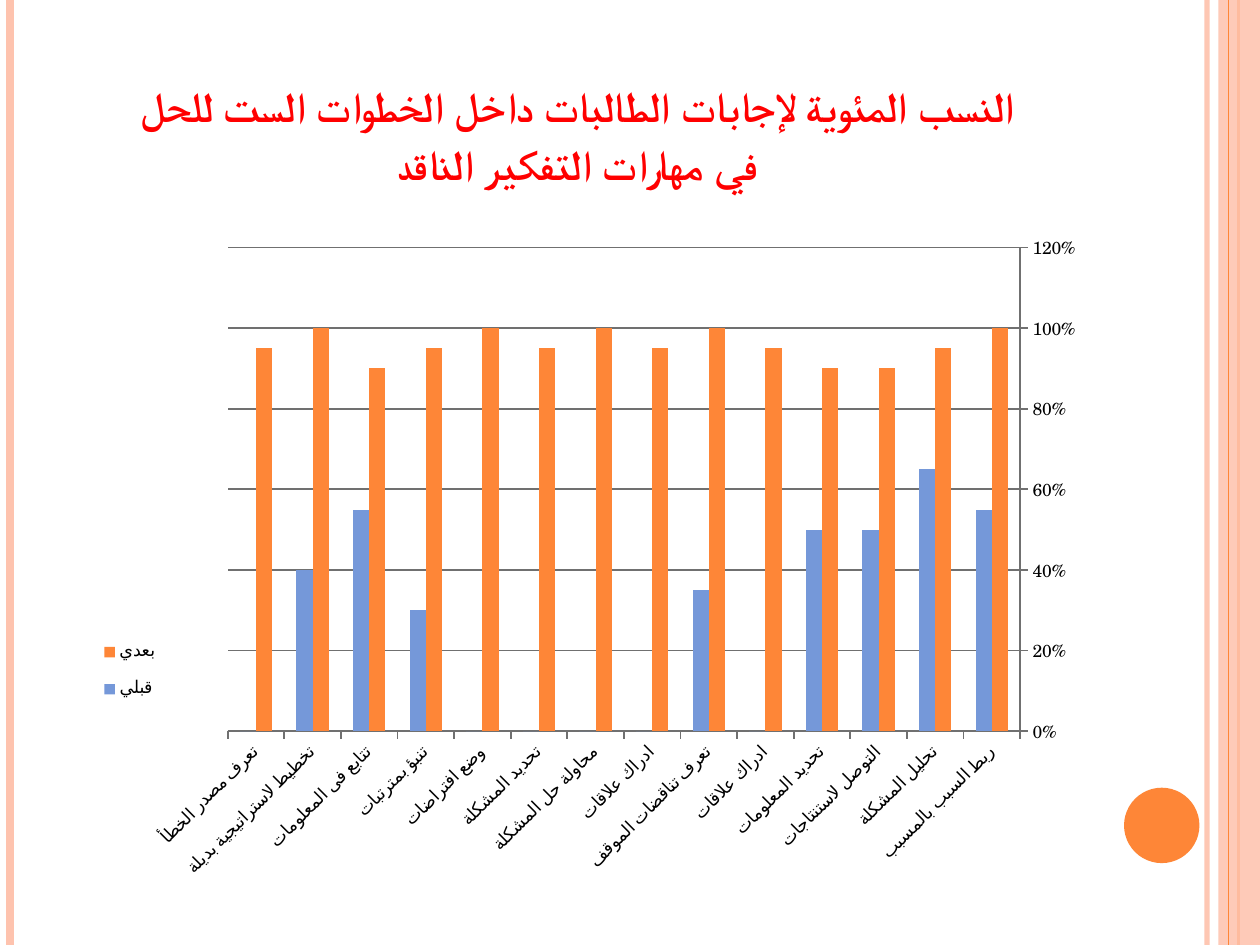
from lxml import etree
from pptx import Presentation
from pptx.chart.data import CategoryChartData as ChartData
from pptx.dml.color import RGBColor as RGB
from pptx.enum.chart import XL_CHART_TYPE as Kind, XL_LEGEND_POSITION as Side
from pptx.enum.chart import XL_TICK_MARK as Tick
from pptx.enum.shapes import MSO_CONNECTOR as Link, MSO_SHAPE as Form
from pptx.enum.text import MSO_ANCHOR as Anchor, PP_ALIGN as Align
from pptx.oxml.ns import qn
from pptx.util import Cm, Pt

COLORS = {"pink": "FEC3AE", "orange": "FE8637", "blue": "7598D9",
          "red": "FF0000", "grey": "707070", "black": "000000"}
WIDE, HIGH = 25.4, 19.05
STEPS = ["ربط السبب بالمسبب", "تحليل المشكلة", "التوصل لاستنتاجات",
         "تحديد المعلومات", "ادراك علاقات", "تعرف تناقضات الموقف",
         "ادراك علاقات", "محاولة حل المشكلة", "تحديد المشكلة",
         "وضع افتراضات", "تنبؤ بمترتبات", "تتابع فى المعلومات",
         "تخطيط لاستراتيجية بديلة", "تعرف مصدر الخطأ"]
SERIES = [
    ("بعدي", "orange", [1, 0.95, 0.9, 0.9, 0.95, 1, 0.95,
                        1, 0.95, 1, 0.95, 0.9, 1, 0.95]),
    ("قبلي", "blue", [0.55, 0.65, 0.5, 0.5, 0, 0.35, 0,
                      0, 0, 0, 0.3, 0.55, 0.4, 0]),
]


def color(name):
    return RGB.from_string(COLORS[name])


def fade(fill, part):
    """Set the opacity of a solid fill, in percent."""
    tone = fill._xPr.find(qn("a:solidFill"))[0]
    etree.SubElement(tone, qn("a:alpha"), val=str(part * 1000))


def add_rule(slide, x, high, tint, width, part=100):
    rule = slide.shapes.add_connector(Link.STRAIGHT, Cm(x), 0, Cm(x), Cm(high))
    rule.line.color.rgb = color(tint)
    rule.line.width = Pt(width)
    if part < 100:
        fade(rule.line.fill, part)
    etree.SubElement(rule._element.spPr, qn("a:effectLst"))


def add_form(slide, form, box, tint, part=100):
    shape = slide.shapes.add_shape(form, *map(Cm, box))
    shape.shadow.inherit = False
    shape.fill.solid()
    shape.fill.fore_color.rgb = color(tint)
    if part < 100:
        fade(shape.fill, part)
    shape.line.fill.background()


def add_frame(slide, wide, high):
    """Draw the side stripes and the corner disc."""
    add_rule(slide, wide - 1.07, high, "pink", 3, 93)
    add_rule(slide, 0.2, high, "pink", 4.5)
    add_rule(slide, wide - 0.43, high, "orange", 1.5)
    add_form(slide, Form.RECTANGLE, (wide - 0.84, 0, 0.84, high), "pink", 87)
    add_rule(slide, wide - 0.64, high, "orange", 0.75)
    add_form(slide, Form.OVAL, (wide - 2.74, high - 3.17, 1.52, 1.52), "orange")


def set_title(title, box):
    title.left, title.top, title.width, title.height = map(Cm, box)
    frame = title.text_frame
    frame.word_wrap = True
    frame.vertical_anchor = Anchor.BOTTOM
    frame.text = ("النسب المئوية لإجابات الطالبات داخل الخطوات الست للحل"
                  "\vفي مهارات التفكير الناقد")
    para = frame.paragraphs[0]
    para.alignment = Align.CENTER
    para.line_spacing = 1.15
    para._p.get_or_add_pPr().set("rtl", "1")
    for run in para.runs:
        font = run.font
        font.name, font.size, font.bold = "Times New Roman", Pt(24), True
        font.color.rgb = color("red")
        props = run._r.get_or_add_rPr()
        props.set("cap", "small")
        etree.SubElement(props, qn("a:cs"), typeface="Times New Roman")


def make_layout(box, inner=False):
    """Build a manual chart layout from fractions of the chart area."""
    layout = etree.Element(qn("c:layout"))
    manual = etree.SubElement(layout, qn("c:manualLayout"))
    marks = [("layoutTarget", "inner")] if inner else []
    marks += [("xMode", "edge"), ("yMode", "edge"), *zip("xywh", box)]
    for tag, val in marks:
        etree.SubElement(manual, qn("c:" + tag), val=str(val))
    return layout


def add_bars(slide, box):
    data = ChartData(number_format="0%")
    data.categories = STEPS
    for name, _, vals in SERIES:
        data.add_series(name, vals)
    chart = slide.shapes.add_chart(
        Kind.COLUMN_CLUSTERED, *map(Cm, box), data).chart
    chart.has_title = False
    chart.font.name, chart.font.size = "TeX Gyre Schola", Pt(10)
    chart.font.color.rgb = color("black")

    plot = chart.plots[0]
    plot.gap_width, plot.overlap = 150, 0
    plot.vary_by_categories = False
    for bars, (_, tint, _) in zip(plot.series, SERIES):
        bars.format.fill.solid()
        bars.format.fill.fore_color.rgb = color(tint)

    cat, val = chart.category_axis, chart.value_axis
    cat.reverse_order = True
    cat.tick_labels.font.size = Pt(10)
    cat._element.find(qn("c:txPr")).find(qn("a:bodyPr")).set("rot", "-2700000")
    val.minimum_scale, val.maximum_scale, val.major_unit = 0, 1.2, 0.2
    val.has_major_gridlines = True
    val.tick_labels.number_format = "0%"
    val.tick_labels.number_format_is_linked = False
    for axis in (cat, val):
        axis.major_tick_mark = Tick.OUTSIDE
    for part in (cat, val, val.major_gridlines):
        part.format.line.color.rgb = color("grey")
        part.format.line.width = Pt(1)

    chart.has_legend = True
    legend = chart.legend
    legend.position = Side.LEFT
    legend.include_in_layout = False
    area = chart._chartSpace.chart.plotArea
    for node in (area, legend._element):
        for old in node.findall(qn("c:layout")):
            node.remove(old)
    area.insert(0, make_layout((0.16, 0.04, 0.77, 0.72), inner=True))
    spot = legend._element.find(qn("c:legendPos"))
    spot.addnext(make_layout((0.02, 0.6, 0.09, 0.14)))


def main():
    deck = Presentation()
    deck.slide_width, deck.slide_height = Cm(WIDE), Cm(HIGH)
    slide = deck.slides.add_slide(deck.slide_layouts[5])
    add_frame(slide, WIDE, HIGH)
    set_title(slide.shapes.title, (1.27, 0.76, 20.75, 3.18))
    add_bars(slide, (1.27, 4.45, 20.75, 13.54))
    deck.save("out.pptx")


if __name__ == "__main__":
    main()
